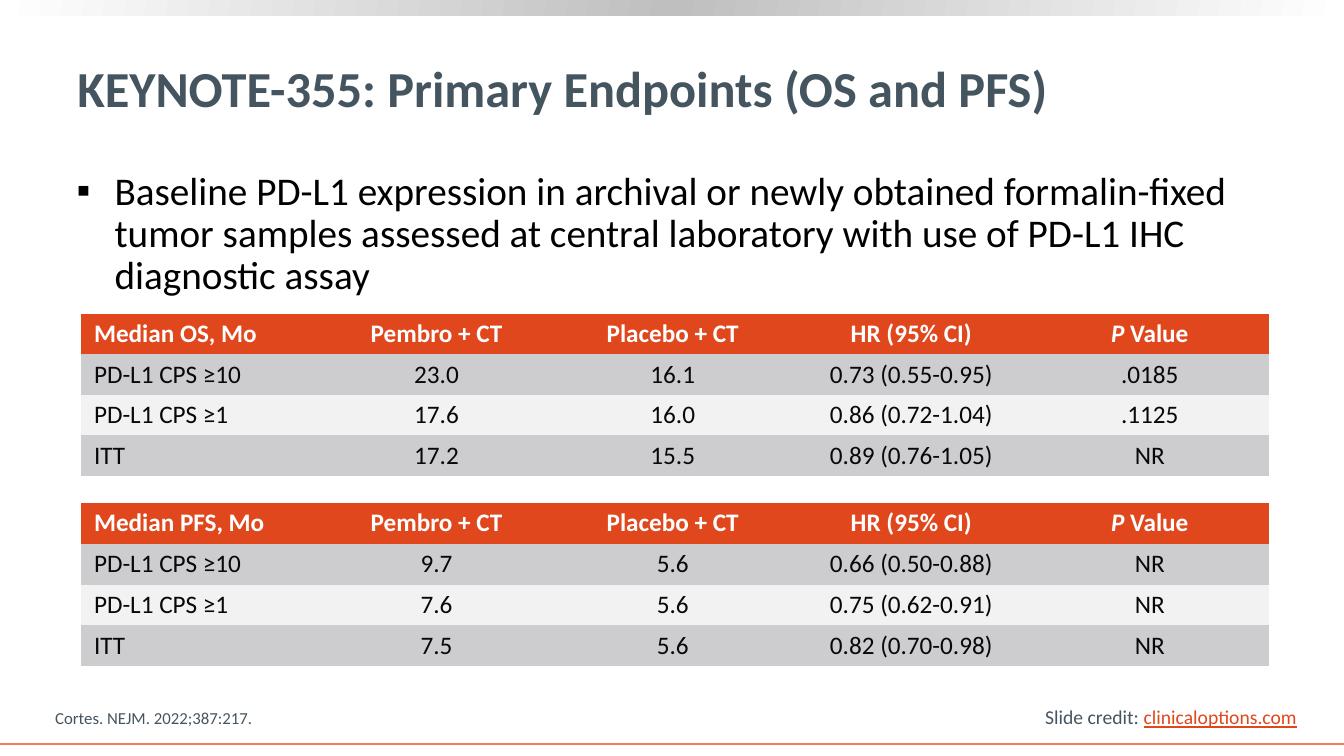
from lxml import etree
from pptx import Presentation
from pptx import util as u
from pptx.dml.color import RGBColor
from pptx.enum import shapes, text
from pptx.oxml import parse_xml
from pptx.oxml.ns import nsdecls, qn

COLORS = {"slate": "455560", "orange": "E1471D", "rule": "F47D55", "ink": "07080A",
          "black": "000000", "white": "FFFFFF", "silver": "BFBFBF",
          "dark_band": "CDCDCF", "light_band": "F2F2F2"}
TITLE = "KEYNOTE-355: Primary Endpoints (OS and PFS)"
BODY = ("Baseline PD-L1 expression in archival or newly obtained formalin-fixed "
        "tumor samples assessed at central laboratory with use of PD-L1 IHC "
        "diagnostic assay")
SOURCE = "Cortes. NEJM. 2022;387:217."
CREDIT = [("Slide credit: ", {}),
          ("clinicaloptions.com", {"color": "orange", "underline": True})]
ARMS = ["Pembro + CT", "Placebo + CT", "HR (95% CI)"]
P_VALUE = [("P ", {"italic": True}), ("Value", {})]
GROUPS = ["PD-L1 CPS ≥10", "PD-L1 CPS ≥1", "ITT"]
TABLES = [
    ("Median OS, Mo", 7.9, 1.015, [
        ["23.0", "16.1", "0.73 (0.55-0.95)", ".0185"],
        ["17.6", "16.0", "0.86 (0.72-1.04)", ".1125"],
        ["17.2", "15.5", "0.89 (0.76-1.05)", "NR"]]),
    ("Median PFS, Mo", 12.67, 1.03, [
        ["9.7", "5.6", "0.66 (0.50-0.88)", "NR"],
        ["7.6", "5.6", "0.75 (0.62-0.91)", "NR"],
        ["7.5", "5.6", "0.82 (0.70-0.98)", "NR"]]),
]
COLUMNS = [6.02, 5.9, 6.01, 6.01, 6.01]
TABLE_LEFT = 2.03
WIDTH, HEIGHT = 33.87, 19.05
PLAIN_STYLE = "{2D5ABB26-0587-4C30-8999-92F81FD0307C}"
CELL = {"margin_left": u.Cm(0.34), "margin_right": u.Cm(0.34),
        "margin_top": u.Cm(0.13), "margin_bottom": u.Cm(0.13),
        "vertical_anchor": text.MSO_ANCHOR.MIDDLE}
ALIGN, ANCHOR = text.PP_ALIGN, text.MSO_ANCHOR


def rgb(name):
    """Return the named colour."""
    return RGBColor.from_string(COLORS[name])


def assign(target, values):
    """Set attributes of an object from a dict."""
    for key, value in values.items():
        setattr(target, key, value)


def write(p, content, size, color, align=ALIGN.LEFT, bold=False):
    """Fill a paragraph with a string or a list of formatted runs."""
    p.alignment = align
    for words, extra in [(content, {})] if isinstance(content, str) else content:
        r = p.add_run()
        r.text = words
        fmt = {"name": "Calibri", "size": u.Pt(size), "bold": bold, **extra}
        r.font.color.rgb = rgb(fmt.pop("color", color))
        assign(r.font, fmt)


def add_text(s, box, content, size, color, anchor=ANCHOR.TOP, wrap=True, **fmt):
    """Add a text box and return its paragraph."""
    tf = s.shapes.add_textbox(*map(u.Cm, box)).text_frame
    assign(tf, {"word_wrap": wrap, "vertical_anchor": anchor})
    write(tf.paragraphs[0], content, size, color, **fmt)
    return tf.paragraphs[0]


def add_bullet(p):
    """Give a paragraph a hanging square bullet."""
    pPr = p._p.get_or_add_pPr()
    pPr.set("marL", str(u.Cm(0.96)))
    pPr.set("indent", str(-u.Cm(0.96)))
    for tag, attrs in (("a:buClr", {}), ("a:buFont", {"typeface": "Arial"}),
                       ("a:buChar", {"char": "▪"})):
        item = etree.SubElement(pPr, qn(tag), attrs)
        if tag == "a:buClr":
            etree.SubElement(item, qn("a:srgbClr"), val=COLORS["black"])
    assign(p, {"line_spacing": 0.9, "space_after": u.Pt(7)})


def add_frame(s):
    """Add the gradient band at the top and the rule at the bottom."""
    sp = s.shapes.add_shape(shapes.MSO_SHAPE.RECTANGLE, 0, 0, u.Cm(WIDTH), u.Cm(0.4))
    sp.shadow.inherit = False
    sp.line.fill.background()
    stops = "".join(f'<a:gs pos="{pos}"><a:srgbClr val="{COLORS[name]}"/></a:gs>'
                    for pos, name in ((0, "white"), (50000, "silver"), (100000, "white")))
    sp._element.spPr.find(qn("a:prstGeom")).addnext(parse_xml(
        f'<a:gradFill {nsdecls("a")} rotWithShape="1"><a:gsLst>{stops}</a:gsLst>'
        '<a:lin ang="11400000" scaled="0"/></a:gradFill>'))
    line = s.shapes.add_connector(shapes.MSO_CONNECTOR.STRAIGHT, 0, u.Cm(18.75),
                                  u.Cm(WIDTH), u.Cm(18.75))
    line.line.color.rgb = rgb("rule")
    line.line.width = u.Pt(1.5)
    etree.SubElement(line._element.spPr, qn("a:effectLst"))


def add_results(s, heading, top, row_height, results):
    """Add one table of median survival results."""
    rows = [[heading, *ARMS, P_VALUE]]
    rows += [[group, *values] for group, values in zip(GROUPS, results)]
    frame = s.shapes.add_table(len(rows), len(COLUMNS), u.Cm(TABLE_LEFT), u.Cm(top),
                               u.Cm(sum(COLUMNS)), u.Cm(row_height * len(rows)))
    table = frame.table
    table._tbl.tblPr.find(qn("a:tableStyleId")).text = PLAIN_STYLE
    for column, width in zip(table.columns, COLUMNS):
        column.width = u.Cm(width)
    for i, row in enumerate(rows):
        table.rows[i].height = u.Cm(row_height)
        band = "orange" if i == 0 else "dark_band" if i % 2 else "light_band"
        for j, content in enumerate(row):
            cell = table.cell(i, j)
            assign(cell, CELL)
            cell.fill.solid()
            cell.fill.fore_color.rgb = rgb(band)
            write(cell.text_frame.paragraphs[0], content, 18,
                  "ink" if i else "white", ALIGN.CENTER if j else ALIGN.LEFT, i == 0)


def main():
    """Build the endpoints slide."""
    prs = Presentation()
    assign(prs, {"slide_width": u.Cm(WIDTH), "slide_height": u.Cm(HEIGHT)})
    s = prs.slides.add_slide(prs.slide_layouts[6])
    add_frame(s)
    add_text(s, (26.09, 17.65, 6.91, 0.86), CREDIT, 14, "slate", wrap=False)
    add_text(s, (1.7, 0.66, 30.2, 3.07), TITLE, 36, "slate", ANCHOR.MIDDLE, bold=True)
    add_bullet(add_text(s, (1.68, 4.19, 30.23, 12.93), BODY, 28, "black"))
    for result in TABLES:
        add_results(s, *result)
    add_text(s, (1.14, 17.7, 21.82, 0.76), SOURCE, 12, "slate", ANCHOR.BOTTOM)
    prs.save("out.pptx")


if __name__ == "__main__":
    main()
